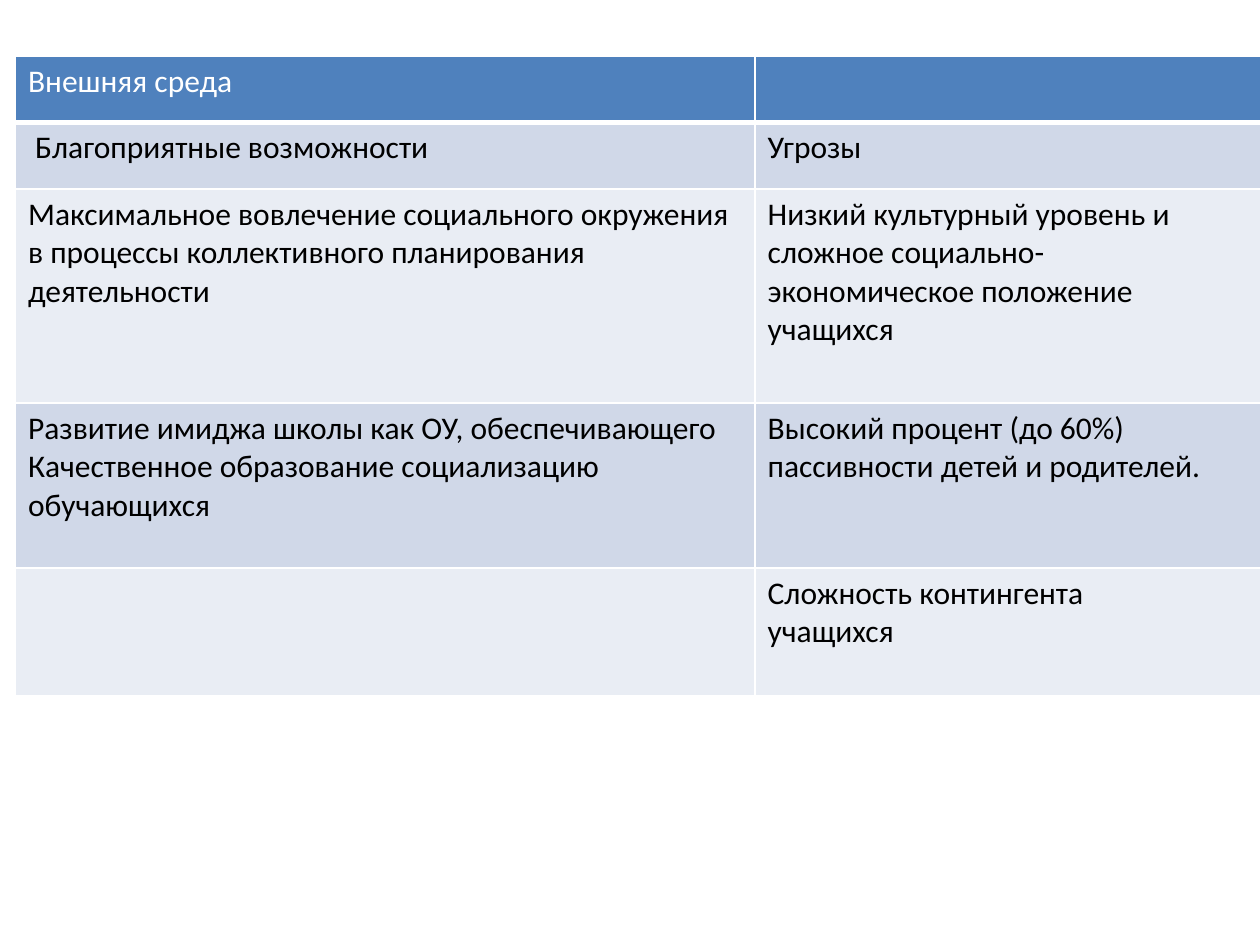
"""Build a slide with a table of opportunities and threats in the external environment."""
import pptx
import pptx.util
import pptx.dml.color
import pptx.oxml
import pptx.oxml.ns

Pt = pptx.util.Pt

ROWS = [
    (["Внешняя среда\u00a0"], []),
    (["\u00a0Благоприятные возможности"], ["Угрозы"]),
    (["Максимальное вовлечение социального окружения в процессы коллективного планирования деятельности"],
     ["Низкий культурный уровень и сложное социально-экономическое положение учащихся"]),
    (["Развитие имиджа школы как ОУ, обеспечивающего", "Качественное образование социализацию", "обучающихся"],
     ["Высокий процент (до 60%) пассивности детей и родителей."]),
    ([], ["Сложность контингента", "учащихся"]),
]
HEIGHTS = [38, 38, 122.4, 94.3, 72.7]
WIDTHS = [422.64, 288.72]
LEFT, TOP = 8.88, 32
HEADER_FILL, BANDS = "4F81BD", ("E9EDF4", "D0D8E8")


def rgb(value):
    """Turn a hex string into a colour."""
    return pptx.dml.color.RGBColor.from_string(value)


def write(p, text, font="Calibri", size=18, color="000000", bold=False):
    """Add one formatted run to a paragraph."""
    r = p.add_run()
    r.text = text
    r.font.name, r.font.size, r.font.bold = font, Pt(size), bold
    r.font.color.rgb = rgb(color)


def set_borders(cell, color="FFFFFF", **widths):
    """Draw the four cell borders, one point wide unless a side is named."""
    tc_pr = cell._tc.get_or_add_tcPr()
    for i, side in enumerate("LRTB"):
        tc_pr.insert(i, pptx.oxml.parse_xml(
            f'<a:ln{side} {pptx.oxml.ns.nsdecls("a")} w="{Pt(widths.get(side, 1))}">'
            f'<a:solidFill><a:srgbClr val="{color}"/></a:solidFill></a:ln{side}>'))


def main():
    """Create the presentation and save it."""
    prs = pptx.Presentation()
    prs.slide_width, prs.slide_height = Pt(720), Pt(540)
    s = prs.slides.add_slide(prs.slide_layouts[6])
    table = s.shapes.add_table(len(ROWS), len(WIDTHS), Pt(LEFT), Pt(TOP),
                               Pt(sum(WIDTHS)), Pt(sum(HEIGHTS))).table
    for column, width in zip(table.columns, WIDTHS):
        column.width = Pt(width)
    for i, (row, height) in enumerate(zip(ROWS, HEIGHTS)):
        table.rows[i].height = Pt(height)
        for j, lines in enumerate(row):
            cell = table.cell(i, j)
            cell.fill.solid()
            cell.fill.fore_color.rgb = rgb(BANDS[i % 2] if i else HEADER_FILL)
            set_borders(cell, T=3 if i == 1 else 1, B=1 if i else 3)
            tf = cell.text_frame
            for k, line in enumerate(lines):
                p = tf.add_paragraph() if k else tf.paragraphs[0]
                write(p, line, color="000000" if i else "FFFFFF")
    prs.save("out.pptx")


if __name__ == "__main__":
    main()
